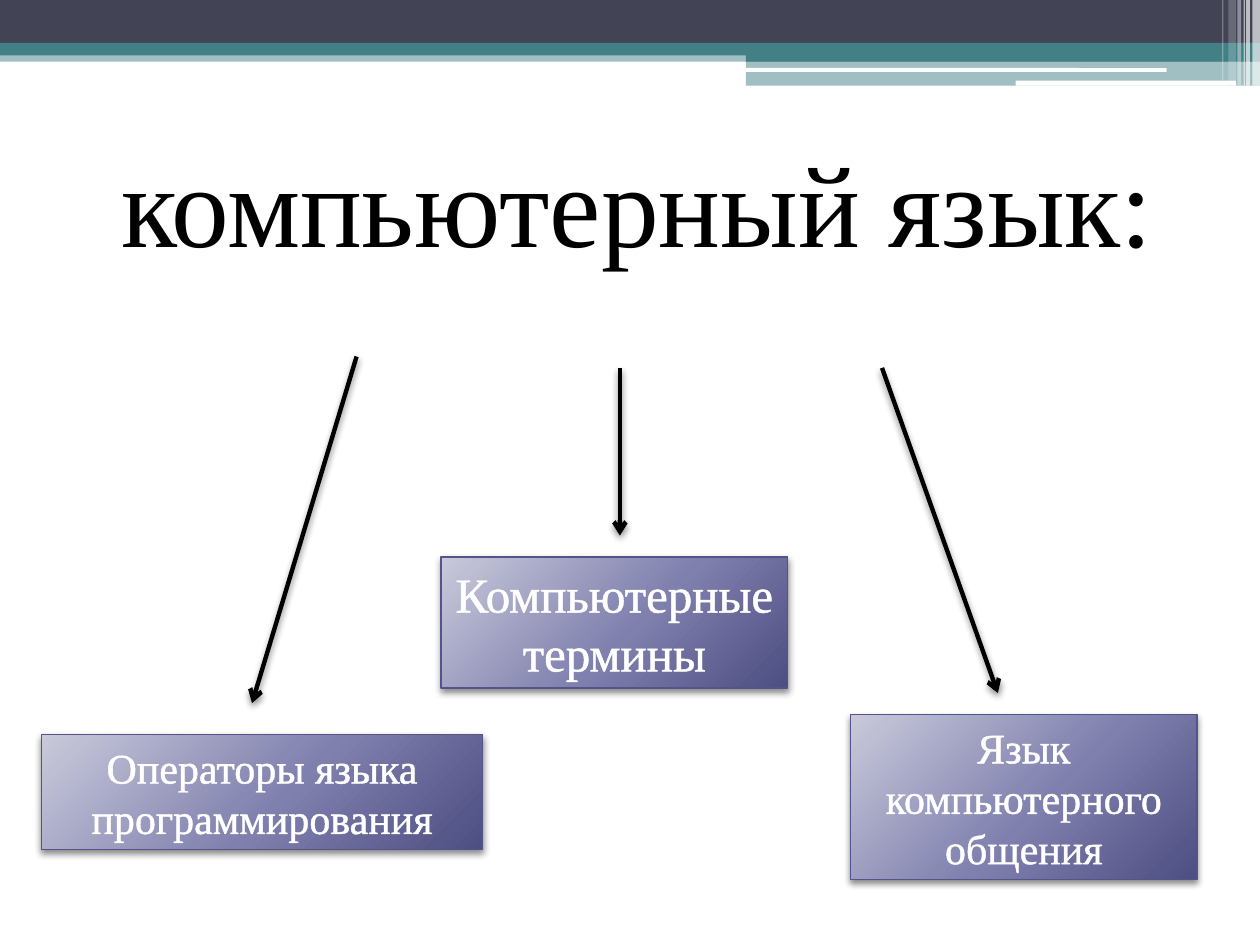
"""Build the slide on the three parts of computer language."""
from typing import NamedTuple

import pptx
import pptx.dml.color
import pptx.enum.shapes
import pptx.enum.text
import pptx.oxml
import pptx.oxml.ns
import pptx.util

Inches = pptx.util.Inches
Pt = pptx.util.Pt
RGBColor = pptx.dml.color.RGBColor
Kind = pptx.enum.shapes.MSO_SHAPE
CENTER = pptx.enum.text.PP_ALIGN.CENTER

FONT = "Times New Roman"
BLACK = RGBColor(0x00, 0x00, 0x00)
WHITE = RGBColor(0xFF, 0xFF, 0xFF)
SLATE = RGBColor(0x42, 0x44, 0x56)
TEAL = RGBColor(0x43, 0x80, 0x86)
VIOLET = RGBColor(0x53, 0x54, 0x8A)
PALE = RGBColor(0xC9, 0xC9, 0xDA)
MID = RGBColor(0x7F, 0x80, 0xAE)
DARK = RGBColor(0x4D, 0x4E, 0x81)


class Band(NamedTuple):
    left: float
    top: float
    width: float
    height: float
    color: RGBColor
    alpha: int = 100
    kind: Kind = Kind.RECTANGLE


class Card(NamedTuple):
    left: float
    top: float
    width: float
    height: float
    text: str
    size: int


class Arrow(NamedTuple):
    x1: float
    y1: float
    x2: float
    y2: float


BANDS = [
    Band(0, 0.4, 10, 0.09, TEAL, 50),
    Band(0, 0, 10, 0.34, SLATE),
    Band(0, 0.34, 10, 0.1, TEAL),
    Band(5.92, 0.39, 4.08, 0.1, TEAL),
    Band(5.92, 0.48, 4.08, 0.2, TEAL, 50),
    Band(5.91, 0.54, 3.35, 0.03, WHITE, 100, Kind.ROUNDED_RECTANGLE),
    Band(8.06, 0.64, 1.75, 0.04, WHITE, 100, Kind.ROUNDED_RECTANGLE),
    Band(9.94, 0, 0.06, 0.68, WHITE, 65),
    Band(9.89, 0, 0.03, 0.68, WHITE, 65),
    Band(9.87, 0, 0.01, 0.68, WHITE, 60),
    Band(9.82, 0, 0.03, 0.68, WHITE, 40),
    Band(9.75, 0, 0.06, 0.64, WHITE, 20),
    Band(9.7, 0, 0.01, 0.64, WHITE, 30),
]
CARDS = [
    Card(0.33, 5.83, 3.5, 0.91, "Операторы языка программирования", 24),
    Card(3.5, 4.42, 2.75, 1.04, "Компьютерные термины", 28),
    Card(6.75, 5.67, 2.75, 1.31, "Язык компьютерного общения", 24),
]
ARROWS = [
    Arrow(2.83, 2.83, 2, 5.58),
    Arrow(4.92, 2.92, 4.92, 4.25),
    Arrow(7, 2.92, 7.92, 5.5),
]


def make(tag: str, inner: str = ""):
    """Return a DrawingML element from its tag and content."""
    space = pptx.oxml.ns.nsdecls("a")
    return pptx.oxml.parse_xml(f"<a:{tag} {space}>{inner}</a:{tag.split()[0]}>")


def tint(color: RGBColor, alpha: int = 100) -> str:
    """Return the XML of a colour with its opacity."""
    return f'<a:srgbClr val="{color}"><a:alpha val="{alpha * 1000}"/></a:srgbClr>'


def shade(shape) -> None:
    """Cast a soft shadow straight down."""
    shape._element.spPr.append(make(
        "effectLst",
        f'<a:outerShdw blurRad="{Pt(4)}" dist="{Pt(2)}" dir="5400000" '
        f'rotWithShape="0">{tint(BLACK, 45)}</a:outerShdw>'))


def write(par, text: str, size: int, color: RGBColor):
    """Add one centred run and return it."""
    par.alignment = CENTER
    run = par.add_run()
    run.text = text
    run.font.size = Pt(size)
    run.font.name = FONT
    run.font.color.rgb = color
    return run


def add_band(slide, band: Band) -> None:
    """Draw one strip of the header."""
    shape = slide.shapes.add_shape(band.kind, *map(Inches, band[:4]))
    shape.shadow.inherit = False
    shape.line.fill.background()
    shape.fill.solid()
    shape.fill.fore_color.rgb = band.color
    if band.alpha < 100:
        color = shape._element.spPr.find(".//" + pptx.oxml.ns.qn("a:srgbClr"))
        color.append(make(f'alpha val="{band.alpha * 1000}"'))


def add_card(slide, card: Card) -> None:
    """Draw one shaded box with its label."""
    shape = slide.shapes.add_shape(Kind.RECTANGLE, *map(Inches, card[:4]))
    stops = "".join(f'<a:gs pos="{pos * 1000}">{tint(color)}</a:gs>'
                    for pos, color in ((0, PALE), (55, MID), (100, DARK)))
    shape._element.spPr.append(make(
        'gradFill rotWithShape="1"',
        f'<a:gsLst>{stops}</a:gsLst><a:path path="circle">'
        '<a:fillToRect l="-40000" t="-90000" r="140000" b="190000"/></a:path>'))
    shape.line.color.rgb = VIOLET
    shape.line.width = Pt(0.75)
    shade(shape)
    frame = shape.text_frame
    frame.word_wrap = True
    frame.auto_size = pptx.enum.text.MSO_AUTO_SIZE.SHAPE_TO_FIT_TEXT
    run = write(frame.paragraphs[0], card.text, card.size, WHITE)
    run.font._element.insert(0, make(
        f'ln w="{Pt(1.45)}"', f"<a:solidFill>{tint(WHITE)}</a:solidFill>"))


def add_arrow(slide, arrow: Arrow) -> None:
    """Draw one arrow from the heading towards a box."""
    line = slide.shapes.add_connector(
        pptx.enum.shapes.MSO_CONNECTOR.STRAIGHT, *map(Inches, arrow))
    line.line.color.rgb = BLACK
    line.line.width = Pt(2.5)
    line.line._get_or_add_ln().append(make('tailEnd type="arrow"'))
    shade(line)


def add_head(slide) -> None:
    """Set the heading in the body placeholder."""
    title, body = slide.placeholders
    title._element.getparent().remove(title._element)
    body.left, body.top, body.width, body.height = map(Inches, (0.5, 1, 9, 1.25))
    par = body.text_frame.paragraphs[0]
    write(par, "компьютерный язык:", 66, BLACK)
    par.space_before = Pt(3)
    props = par._p.get_or_add_pPr()
    props.set("marL", str(Inches(0.4)))
    props.set("indent", str(Inches(-0.28)))
    props.append(make("buNone"))


def main() -> None:
    """Build and save the slide."""
    deck = pptx.Presentation()
    deck.slide_width, deck.slide_height = Inches(10), Inches(7.5)
    slide = deck.slides.add_slide(deck.slide_layouts[1])
    for band in BANDS:
        add_band(slide, band)
    add_head(slide)
    for arrow, card in zip(ARROWS, CARDS):
        add_arrow(slide, arrow)
        add_card(slide, card)
    deck.save("out.pptx")


if __name__ == "__main__":
    main()
